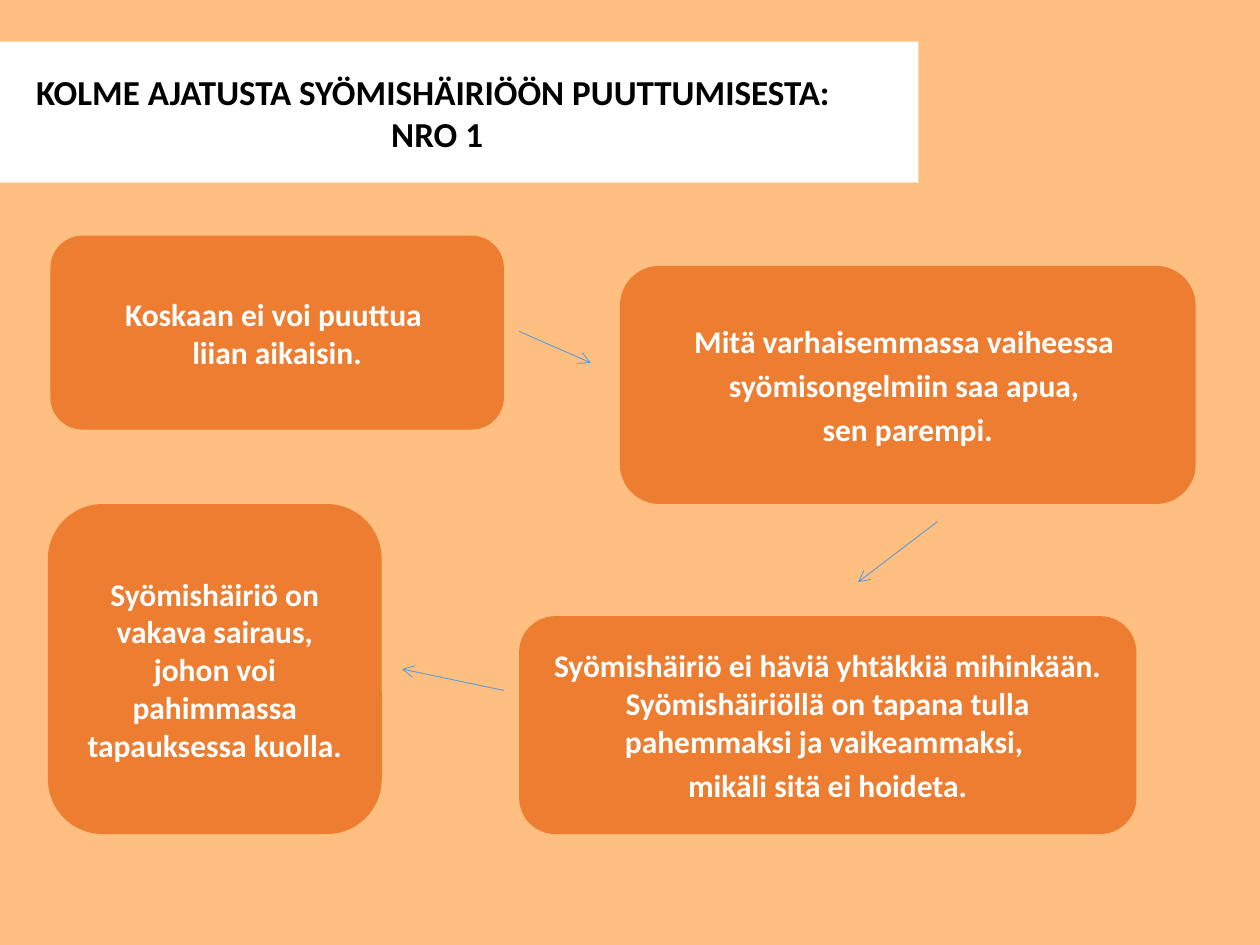
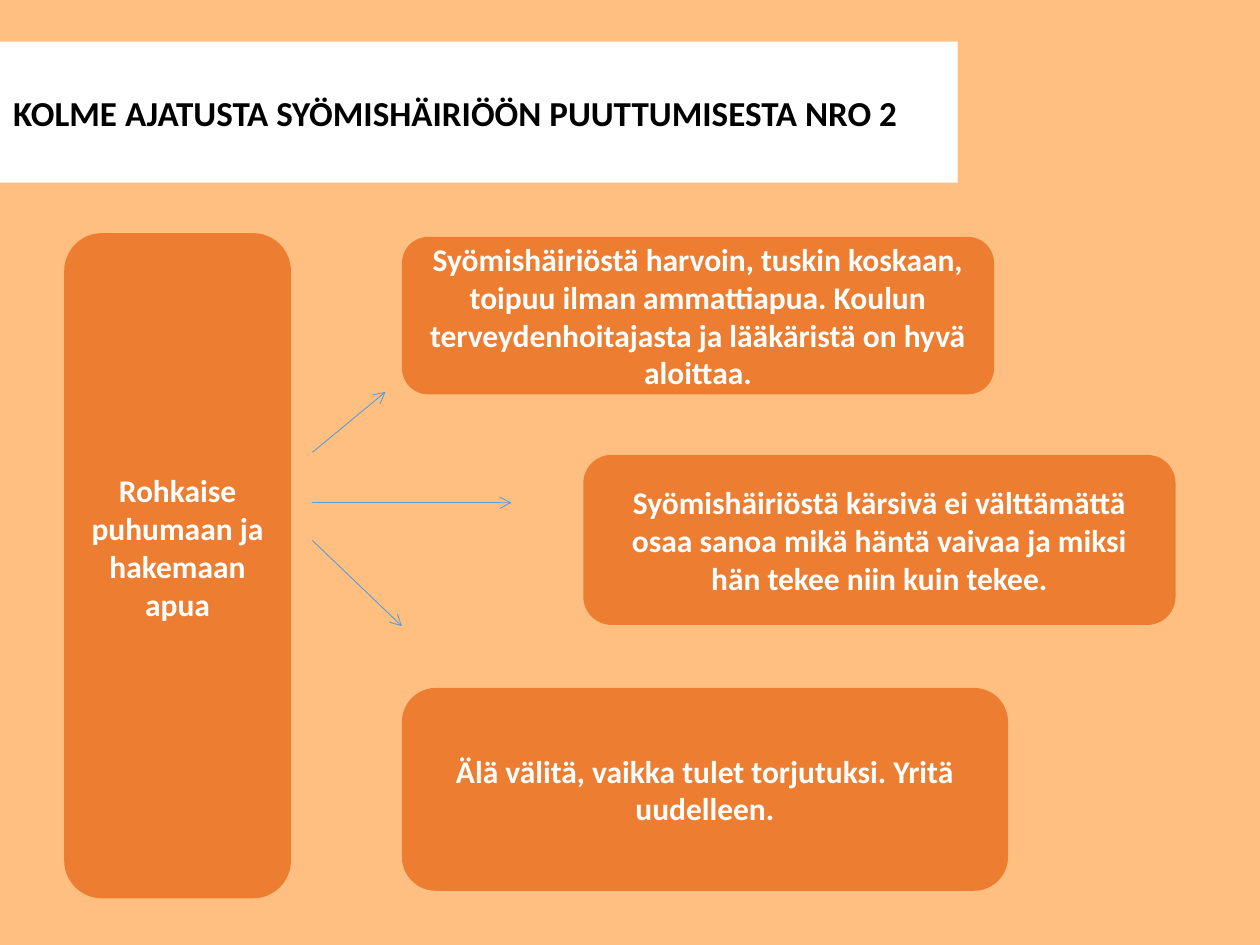
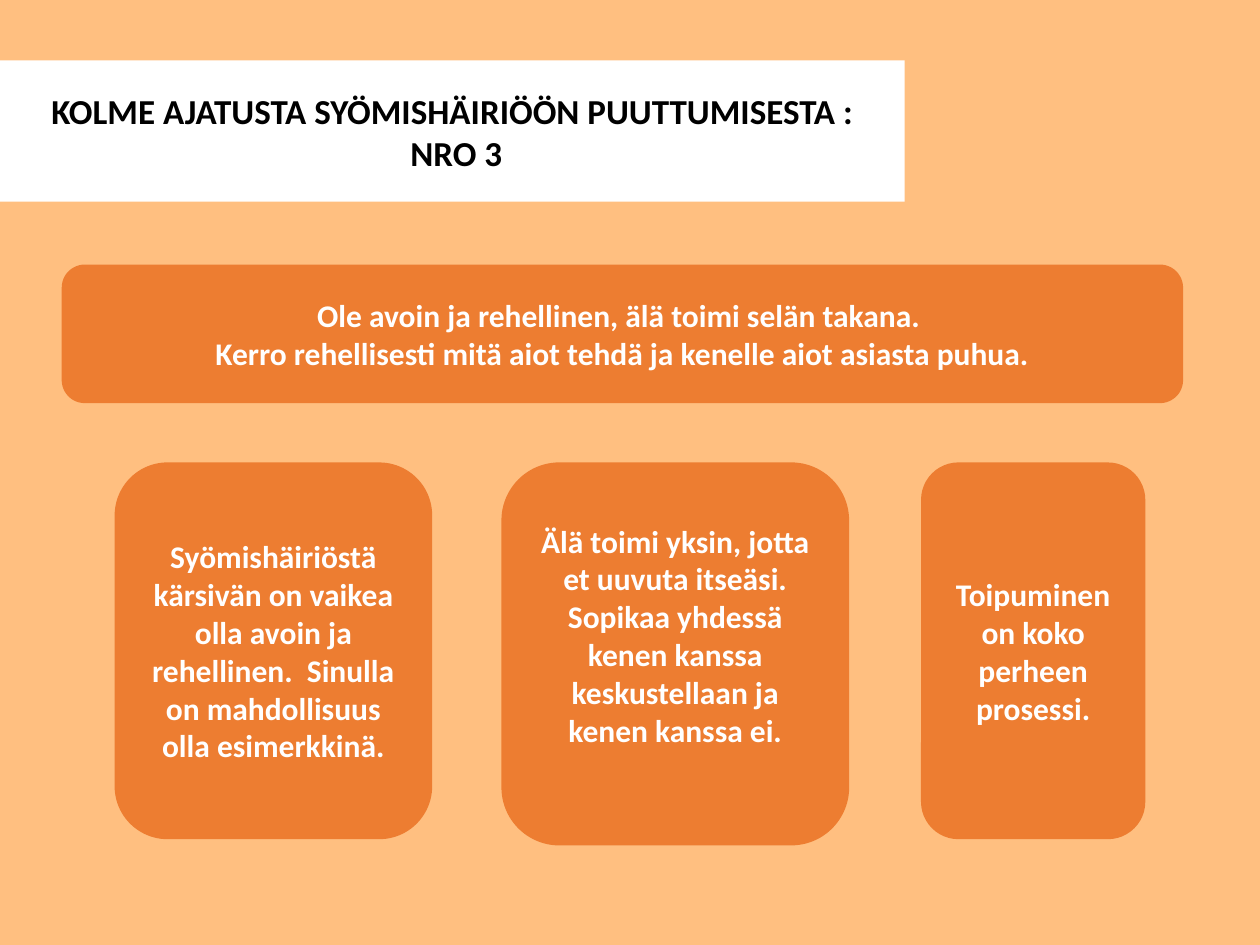
from dataclasses import dataclass

from lxml.etree import SubElement
from pptx import Presentation
from pptx.dml.color import RGBColor
from pptx.enum.shapes import MSO_CONNECTOR, MSO_SHAPE
from pptx.enum.text import MSO_ANCHOR, PP_ALIGN
from pptx.oxml.ns import qn
from pptx.util import Inches, Pt


@dataclass(frozen=True)
class Theme:
    font: str = "Calibri"
    background: str = "FFBF80"
    band: str = "FFFFFF"
    card: str = "ED7D31"
    arrow: str = "5B9BD5"
    title_text: str = "000000"
    card_text: str = "FFFFFF"
    title_size: float = 20
    card_size: float = 18
    spaced: float = 3.6
    arrow_width: float = 0.5


THEME = Theme()

# The slide is a grid of 100 columns by 75 rows with square cells
COLUMNS, ROWS = 100, 75
CELL = Inches(0.1)
BAND_HEIGHT = 11.2
INSET = 0.5
RAISED_INSET = 3.5


def grid(*cells):
    """Turn columns and rows into lengths."""
    return [round(cell * CELL) for cell in cells]


def color(code):
    return RGBColor.from_string(code)


# Elements
def add_page(deck):
    page = deck.slides.add_slide(deck.slide_layouts[6])
    fill = page.background.fill
    fill.solid()
    fill.fore_color.rgb = color(THEME.background)
    return page


def add_box(page, preset, place, fill, lines, size, text_color,
            space_before=0, bottom_inset=INSET):
    """Add a filled outline-free shape with bold centred lines of text."""
    box = page.shapes.add_shape(preset, *grid(*place))
    box.shadow.inherit = False
    box.fill.solid()
    box.fill.fore_color.rgb = color(fill)
    box.line.fill.background()

    frame = box.text_frame
    frame.word_wrap = True
    frame.vertical_anchor = MSO_ANCHOR.MIDDLE
    frame.margin_bottom, = grid(bottom_inset)
    frame.text = "\n".join(lines)
    for para in frame.paragraphs:
        para.alignment = PP_ALIGN.CENTER
        para.space_before = Pt(space_before)
        para.font.name = THEME.font
        para.font.size = Pt(size)
        para.font.bold = True
        para.font.color.rgb = color(text_color)


def add_title_band(page, left, top, width, *lines):
    add_box(page, MSO_SHAPE.RECTANGLE, (left, top, width, BAND_HEIGHT),
            THEME.band, lines, THEME.title_size, THEME.title_text)


def add_card(page, place, *lines, **spacing):
    add_box(page, MSO_SHAPE.ROUNDED_RECTANGLE, place,
            THEME.card, lines, THEME.card_size, THEME.card_text, **spacing)


def add_arrow(page, start, end):
    arrow = page.shapes.add_connector(
        MSO_CONNECTOR.STRAIGHT, *grid(*start, *end))
    arrow.line.color.rgb = color(THEME.arrow)
    arrow.line.width = Pt(THEME.arrow_width)
    properties = arrow.element.spPr
    SubElement(properties.find(qn("a:ln")), qn("a:tailEnd"), type="arrow")
    SubElement(properties, qn("a:effectLst"))


# Slides
def build_early_help(deck):
    page = add_page(deck)
    add_title_band(page, -3.5, 3.3, 76.4,
                   "KOLME AJATUSTA SYÖMISHÄIRIÖÖN PUUTTUMISESTA: ", "NRO 1")
    add_card(page, (4, 18.7, 36, 15.4),
             "Koskaan ei voi puuttua ", "liian aikaisin.")
    add_card(page, (49.2, 21.1, 45.7, 18.9),
             "Mitä varhaisemmassa vaiheessa ",
             "syömisongelmiin saa apua, ",
             "sen parempi.", space_before=THEME.spaced)
    add_card(page, (3.8, 40, 26.5, 26.2),
             "Syömishäiriö on vakava sairaus, johon voi pahimmassa "
             "tapauksessa kuolla.", space_before=THEME.spaced)
    add_card(page, (41.2, 48.9, 49, 17.3),
             "Syömishäiriö ei häviä yhtäkkiä mihinkään. Syömishäiriöllä on "
             "tapana tulla pahemmaksi ja vaikeammaksi, ",
             "mikäli sitä ei hoideta.", space_before=THEME.spaced)
    add_arrow(page, (41.2, 26.3), (46.9, 28.8))
    add_arrow(page, (74.4, 41.4), (68.1, 46.2))
    add_arrow(page, (40, 54.8), (31.9, 53.1))


def build_encouragement(deck):
    page = add_page(deck)
    add_title_band(page, -3.7, 3.3, 79.7,
                   "KOLME AJATUSTA SYÖMISHÄIRIÖÖN PUUTTUMISESTA NRO 2")
    add_card(page, (5.1, 18.5, 18, 52.8),
             "Rohkaise puhumaan ja hakemaan apua", bottom_inset=RAISED_INSET)

    advice = [
        ((31.9, 18.8, 47, 12.5),
         "Syömishäiriöstä harvoin, tuskin koskaan, toipuu ilman ammattiapua. "
         "Koulun terveydenhoitajasta ja lääkäristä on hyvä aloittaa."),
        ((46.3, 36.1, 47, 13.5),
         "Syömishäiriöstä kärsivä ei välttämättä osaa sanoa mikä häntä "
         "vaivaa ja miksi hän tekee niin kuin tekee."),
        ((31.9, 54.6, 48.1, 16.1),
         "Älä välitä, vaikka tulet torjutuksi. Yritä uudelleen."),
    ]
    for place, text in advice:
        add_card(page, place, text, space_before=THEME.spaced)

    # Arrows fan out from one column beside the tall card
    fan_left = 24.8
    for start_row, end in [(35.9, (30.6, 31.1)),
                           (39.9, (40.6, 39.9)),
                           (42.9, (31.9, 49.7))]:
        add_arrow(page, (fan_left, start_row), end)


def build_openness(deck):
    page = add_page(deck)
    add_title_band(page, 0, 4.8, 71.8,
                   "KOLME AJATUSTA SYÖMISHÄIRIÖÖN PUUTTUMISESTA :", " NRO 3")
    add_card(page, (4.9, 21, 89, 11),
             "Ole avoin ja rehellinen, älä toimi selän takana. ",
             "Kerro rehellisesti mitä aiot tehdä ja kenelle aiot asiasta "
             "puhua.")

    # Three cards hang from the same row
    row_top = 36.7
    add_card(page, (9.1, row_top, 25.2, 29.9),
             "Syömishäiriöstä kärsivän on vaikea olla avoin ja rehellinen.  "
             "Sinulla on mahdollisuus olla esimerkkinä.")
    add_card(page, (39.8, row_top, 27.6, 30.4),
             "Älä toimi yksin, jotta et uuvuta itseäsi. Sopikaa yhdessä "
             "kenen kanssa keskustellaan ja kenen kanssa ei.",
             bottom_inset=RAISED_INSET)
    add_card(page, (73.1, row_top, 17.8, 29.9),
             "Toipuminen on koko perheen prosessi.")


def main():
    deck = Presentation()
    deck.slide_width, deck.slide_height = grid(COLUMNS, ROWS)
    build_early_help(deck)
    build_encouragement(deck)
    build_openness(deck)
    deck.save("out.pptx")


if __name__ == "__main__":
    main()
